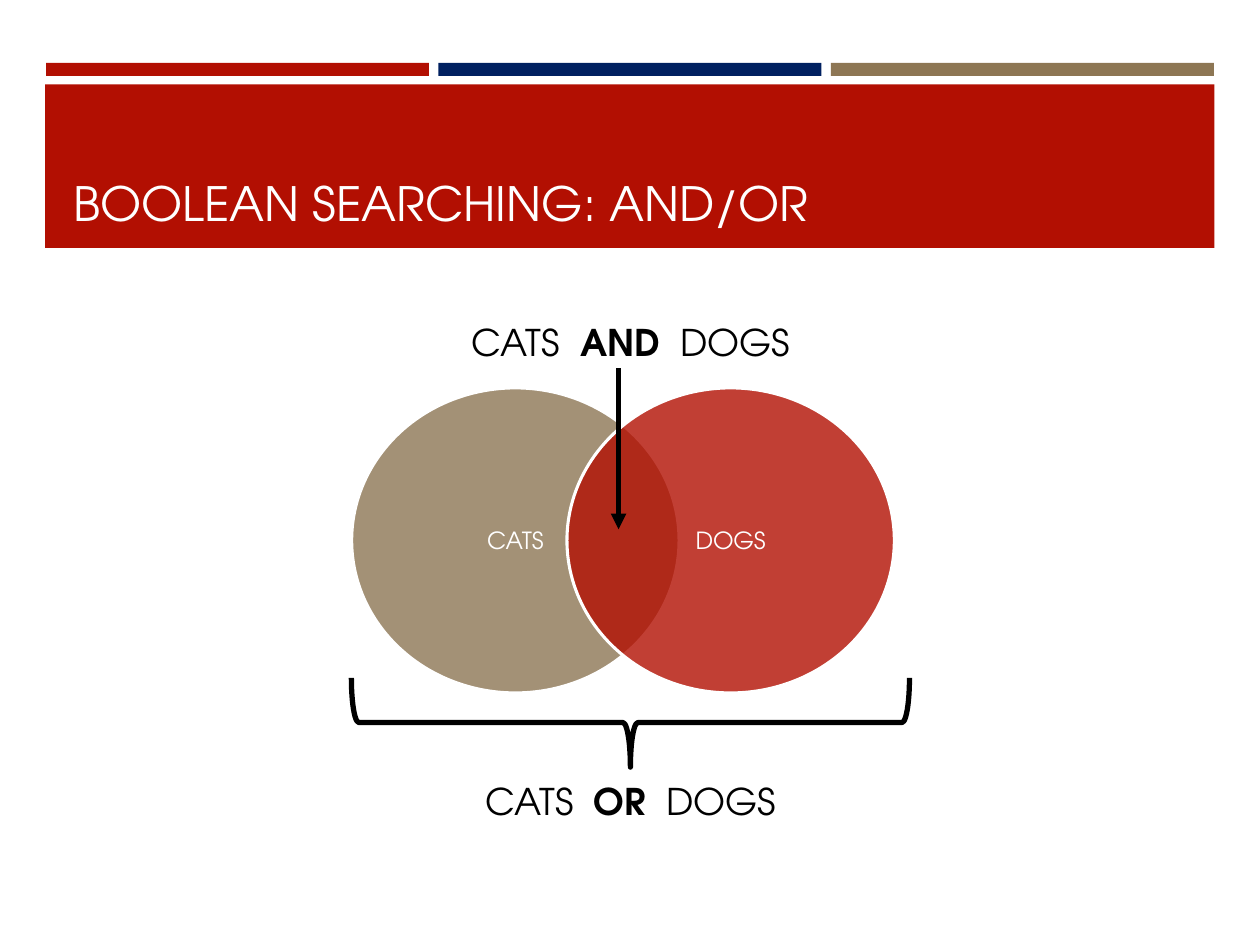
from lxml.etree import SubElement
from pptx import Presentation
from pptx.dml.color import RGBColor
from pptx.enum.shapes import MSO_CONNECTOR, MSO_SHAPE
from pptx.enum.text import MSO_ANCHOR, MSO_AUTO_SIZE, PP_ALIGN
from pptx.oxml.ns import qn
from pptx.util import Cm, Pt

FONT = "TeX Gyre Adventor"
RED, NAVY, TAN = "B20F02", "002060", "8D7654"
WHITE, BLACK = "FFFFFF", "000000"

TITLE = "BOOLEAN SEARCHING: AND/OR"
BAR_COLORS = [RED, NAVY, TAN]
SETS = [("CATS", TAN), ("DOGS", RED)]
# operator, top and width of its caption, in centimetres
CAPTIONS = [("AND", 6.32, 7.06), ("OR", 15.57, 6.5)]

BAR_LEFT, BAR_STEP = 0.93, 7.91
CIRCLE_LEFT, CIRCLE_STEP = 7.09, 4.34
CAPTION_CENTER = 12.78
ARROW_X = 12.47


def rgb(color):
    return RGBColor.from_string(color)


def write(frame, *pieces, size, color, align=PP_ALIGN.LEFT, anchor=MSO_ANCHOR.TOP):
    """Fill a text frame with one paragraph of (text, bold) pieces."""
    frame.vertical_anchor = anchor
    para = frame.paragraphs[0]
    para.alignment = align
    for text, bold in pieces:
        span = para.add_run()
        span.text = text
        span.font.name = FONT
        span.font.size = Pt(size)
        span.font.bold = bold
        span.font.color.rgb = rgb(color)


def add_shape(page, kind, left, top, width, height, fill=None, alpha=None,
              line=None, weight=1):
    shape = page.shapes.add_shape(kind, Cm(left), Cm(top), Cm(width), Cm(height))
    shape.shadow.inherit = False
    if fill:
        shape.fill.solid()
        shape.fill.fore_color.rgb = rgb(fill)
    else:
        shape.fill.background()
    if alpha:
        color = shape.fill._xPr.find(".//" + qn("a:srgbClr"))
        SubElement(color, qn("a:alpha"), val=str(alpha * 1000))
    if line:
        shape.line.color.rgb = rgb(line)
        shape.line.width = Pt(weight)
    else:
        shape.line.fill.background()
    return shape


def add_header(page):
    for index, color in enumerate(BAR_COLORS):
        add_shape(page, MSO_SHAPE.RECTANGLE, BAR_LEFT + index * BAR_STEP, 1.27,
                  7.72, 0.26, fill=color)
    add_shape(page, MSO_SHAPE.RECTANGLE, 0.91, 1.7, 23.57, 3.3, fill=RED)
    title = page.shapes.title
    title.left, title.top, title.width, title.height = Cm(1.22), Cm(1.96), Cm(22.99), Cm(2.82)
    write(title.text_frame, (TITLE, False), size=27, color=WHITE,
          anchor=MSO_ANCHOR.BOTTOM)
    page.shapes._spTree.append(title._element)  # in front of the red band


def add_circles(page):
    for index, (name, color) in enumerate(SETS):
        circle = add_shape(page, MSO_SHAPE.OVAL, CIRCLE_LEFT + index * CIRCLE_STEP,
                           7.82, 6.6, 6.15, fill=color, alpha=80, line=WHITE, weight=1.75)
        write(circle.text_frame, (name, False), size=13.5, color=WHITE,
              align=PP_ALIGN.CENTER, anchor=MSO_ANCHOR.MIDDLE)


def add_captions(page):
    for operator, top, width in CAPTIONS:
        box = page.shapes.add_textbox(Cm(CAPTION_CENTER - width / 2), Cm(top),
                                      Cm(width), Cm(1.14))
        frame = box.text_frame
        frame.word_wrap = False
        frame.auto_size = MSO_AUTO_SIZE.SHAPE_TO_FIT_TEXT
        write(frame, ("CATS  ", False), (operator, True), ("  DOGS", False),
              size=21, color=BLACK)


def add_arrow(page):
    arrow = page.shapes.add_connector(MSO_CONNECTOR.STRAIGHT, Cm(ARROW_X), Cm(7.42),
                                      Cm(ARROW_X), Cm(10.67))
    arrow.line.color.rgb = rgb(BLACK)
    arrow.line.width = Pt(3)
    SubElement(arrow.line._get_or_add_ln(), qn("a:tailEnd"), type="triangle")
    SubElement(arrow._element.spPr, qn("a:effectLst"))


def main():
    deck = Presentation()
    deck.slide_width, deck.slide_height = Cm(25.4), Cm(19.05)
    page = deck.slides.add_slide(deck.slide_layouts[5])
    add_header(page)
    add_circles(page)
    add_captions(page)
    brace = add_shape(page, MSO_SHAPE.LEFT_BRACE, 11.81, 8.94, 1.8, 11.25,
                      line=BLACK, weight=3)
    brace.rotation = 270
    add_arrow(page)
    deck.save("out.pptx")


if __name__ == "__main__":
    main()
